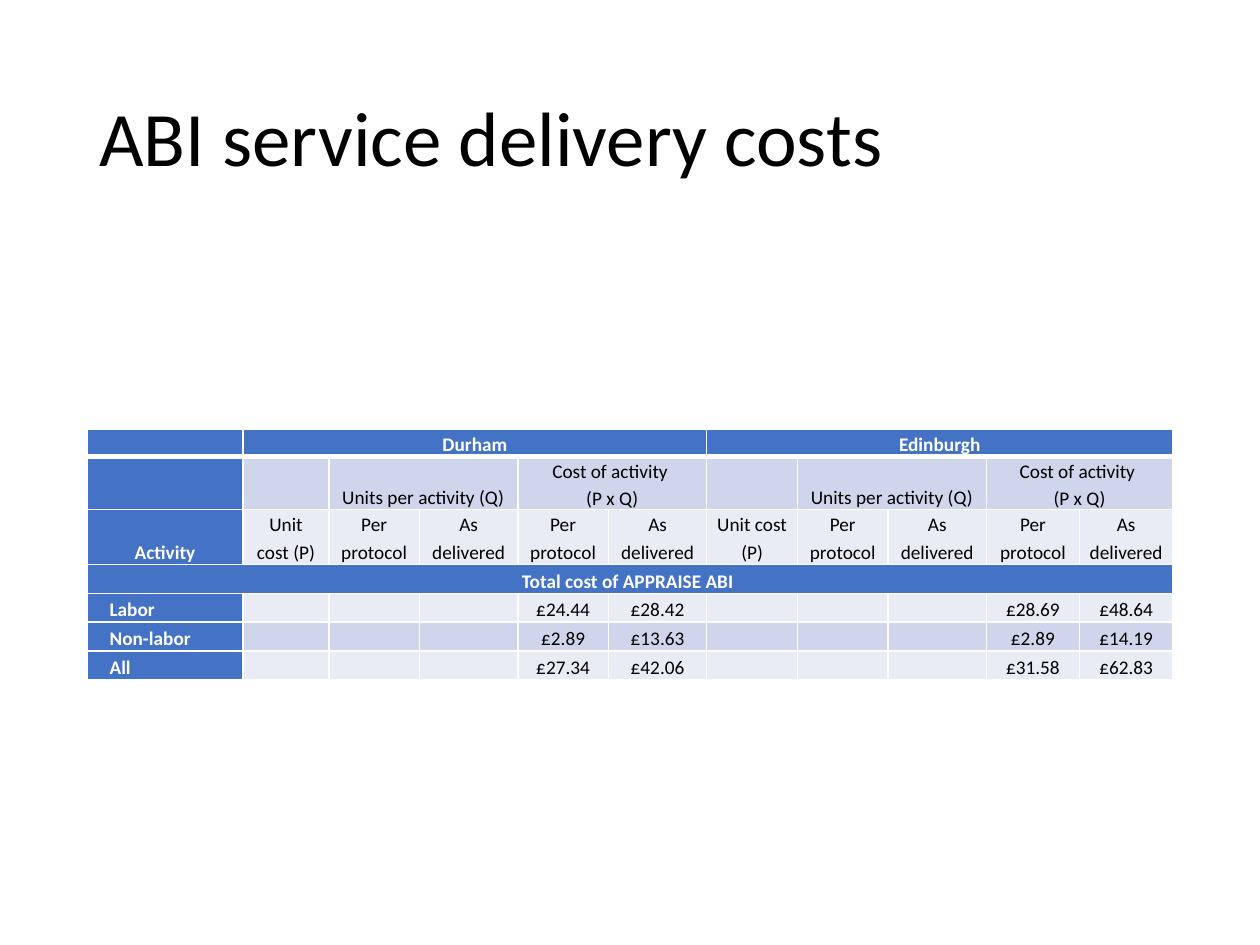
import pptx
import pptx.util
import pptx.dml.color
import pptx.enum.text
import pptx.oxml
import pptx.oxml.ns

Inches = pptx.util.Inches
Pt = pptx.util.Pt
RGBColor = pptx.dml.color.RGBColor
ALIGN = pptx.enum.text.PP_ALIGN
ANCHOR = pptx.enum.text.MSO_ANCHOR

BLACK = RGBColor(0x00, 0x00, 0x00)
WHITE = RGBColor(0xFF, 0xFF, 0xFF)
BLUE = RGBColor(0x44, 0x72, 0xC4)
DARK_BAND = RGBColor(0xCF, 0xD5, 0xEA)
LIGHT_BAND = RGBColor(0xE9, 0xEB, 0xF5)
FONT = "Calibri"

COL_WIDTHS = [1.24, 0.68, 0.72, 0.78, 0.72, 0.78, 0.72, 0.72, 0.78, 0.74, 0.74]
ROW_HEIGHTS = [0.21, 0.42, 0.44, 0.23, 0.23, 0.23, 0.23]
HEADING_ROWS = (0, 3)
FIRST_COST_ROW = 4
SITE_GROUPS = ["", "Units per activity (Q)", "", "Cost of activity \v(P x Q)", ""]
SITE_COLUMNS = ["Unit cost (P)"] + ["Per protocol", "As delivered"] * 2
COSTS = [
    ("Labor", ["£24.44", "£28.42"], ["£28.69", "£48.64"]),
    ("Non-labor", ["£2.89", "£13.63"], ["£2.89", "£14.19"]),
    ("All", ["£27.34", "£42.06"], ["£31.58", "£62.83"]),
]
ROWS = [
    ["", "Durham", "", "", "", "", "Edinburgh", "", "", "", ""],
    [""] + SITE_GROUPS * 2,
    ["Activity"] + SITE_COLUMNS * 2,
    ["Total cost of APPRAISE ABI "] + [""] * 10,
] + [[name] + [""] * 3 + durham + [""] * 3 + edinburgh for name, durham, edinburgh in COSTS]
SPANS = [(0, 1, 5), (0, 6, 5), (3, 0, 11)] + [(1, c, 2) for c in (2, 4, 7, 9)]


def add_title(slide, left, top, width, height, text):
    """Place the slide title in the given box."""
    tf = slide.shapes.add_textbox(left, top, width, height).text_frame
    tf.word_wrap = True
    tf.vertical_anchor = ANCHOR.MIDDLE
    p = tf.paragraphs[0]
    p.text = text
    p.line_spacing = 0.9
    p.font.name, p.font.size, p.font.color.rgb = FONT, Pt(44), BLACK


def set_borders(cell, bottom):
    """Give a cell white borders, with its own bottom width in points."""
    tc_pr = cell._tc.get_or_add_tcPr()
    for side, width in (("L", 1), ("R", 1), ("T", 1), ("B", bottom)):
        tc_pr.append(pptx.oxml.parse_xml(
            f'<a:ln{side} {pptx.oxml.ns.nsdecls("a")} w="{Pt(width)}">'
            f'<a:solidFill><a:srgbClr val="{WHITE}"/></a:solidFill></a:ln{side}>'))


def fill_cell(cell, row, col, text):
    """Write and style one cell according to its row and column."""
    heading = row in HEADING_ROWS or col == 0
    set_borders(cell, 3 if row == 0 else 1)
    cell.fill.solid()
    cell.fill.fore_color.rgb = BLUE if heading else DARK_BAND if row % 2 else LIGHT_BAND
    cell.vertical_anchor = ANCHOR.BOTTOM
    cell.margin_left = cell.margin_right = Inches(0.07)
    cell.margin_top = cell.margin_bottom = 0
    p = cell.text_frame.paragraphs[0]
    p.line_spacing = 1.15
    if col == 0 and row >= FIRST_COST_ROW:
        p._p.get_or_add_pPr().set("marL", str(Inches(0.11)))
    else:
        p.alignment = ALIGN.CENTER
    p.font.name, p.font.size, p.font.bold = FONT, Pt(11), heading
    p.font.color.rgb = WHITE if heading else BLACK
    if text:
        p.text = text
    else:
        p._p.append(pptx.oxml.parse_xml(
            f'<a:endParaRPr {pptx.oxml.ns.nsdecls("a")} sz="1100"/>'))


def add_cost_table(slide, left, top, width, height):
    """Place the cost table, scaling its columns and rows to the box."""
    table = slide.shapes.add_table(
        len(ROW_HEIGHTS), len(COL_WIDTHS), left, top, width, height).table
    for column, w in zip(table.columns, COL_WIDTHS):
        column.width = int(width * w / sum(COL_WIDTHS))
    for row, h in zip(table.rows, ROW_HEIGHTS):
        row.height = int(height * h / sum(ROW_HEIGHTS))
    for r, texts in enumerate(ROWS):
        for c, text in enumerate(texts):
            fill_cell(table.cell(r, c), r, c, text)
    for r, c, count in SPANS:
        table.cell(r, c).merge(table.cell(r, c + count - 1))


def main():
    """Build and save the presentation."""
    prs = pptx.Presentation()
    prs.slide_width, prs.slide_height = Inches(10), Inches(7.5)
    slide = prs.slides.add_slide(prs.slide_layouts[6])
    left, width = Inches(0.69), Inches(8.62)
    add_title(slide, left, Inches(0.4), width, Inches(1.45), "ABI service delivery costs")
    add_cost_table(slide, left, Inches(3.41), width, Inches(1.98))
    prs.save("out.pptx")


if __name__ == "__main__":
    main()
